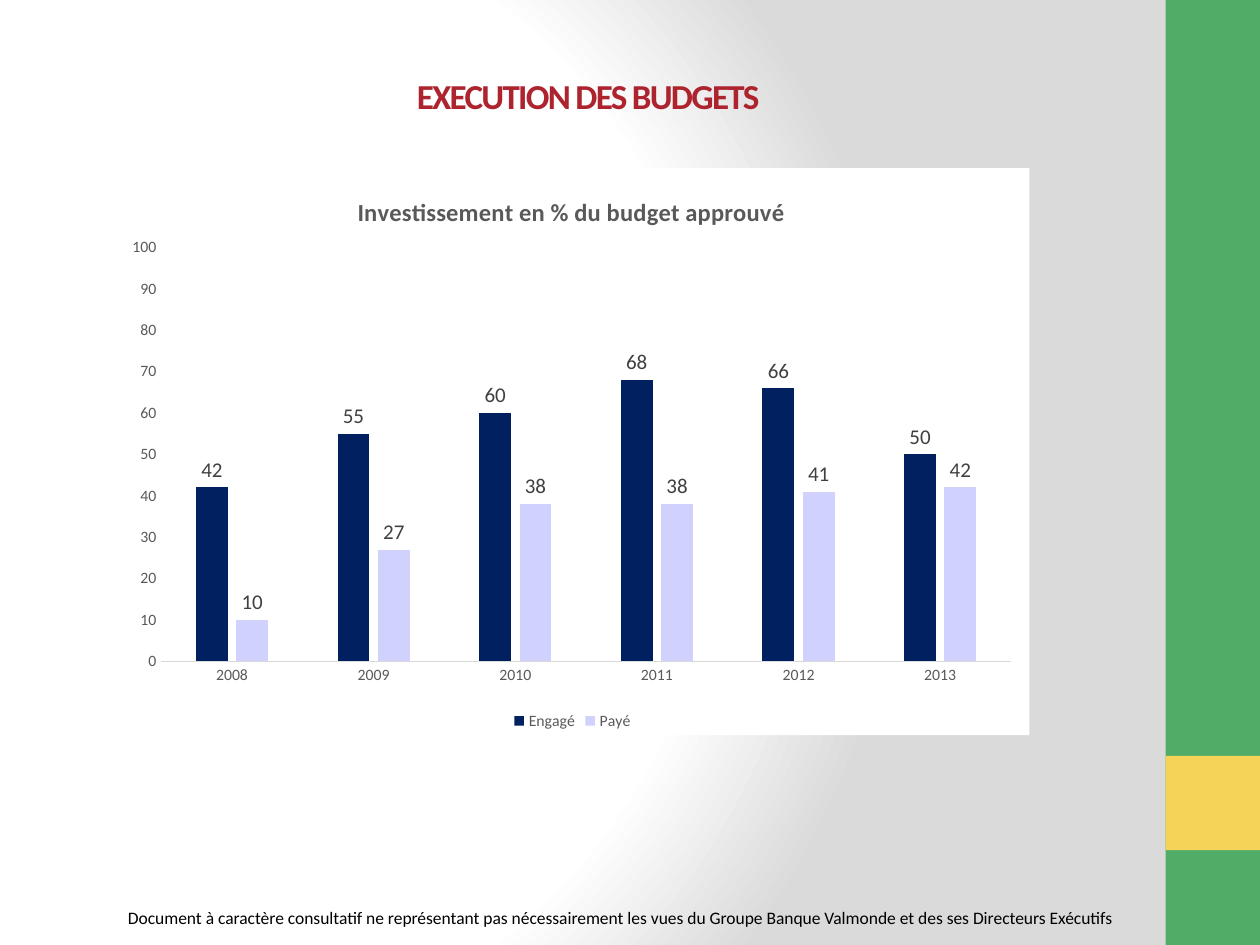
from dataclasses import dataclass

import pptx
import pptx.chart.data
import pptx.dml.color
import pptx.enum.chart
import pptx.enum.shapes
import pptx.enum.text
import pptx.oxml
import pptx.oxml.ns
import pptx.util

Cm = pptx.util.Cm
Pt = pptx.util.Pt
qn = pptx.oxml.ns.qn


@dataclass(frozen=True)
class Theme:
    font: str = "Calibri"
    green: str = "50AD68"
    yellow: str = "F4D356"
    red: str = "AD242F"
    navy: str = "002060"
    lilac: str = "D0D1FD"
    black: str = "000000"
    label: str = "404040"
    muted: str = "595959"
    rule: str = "D9D9D9"
    white: str = "FFFFFF"
    shade: str = "DADADA"
    title_size: int = 20
    chart_title_size: int = 14
    label_size: int = 12
    footer_size: int = 10
    axis_size: int = 9


THEME = Theme()


def rgb(value):
    return pptx.dml.color.RGBColor.from_string(value)


def style_font(font, size, color, bold=False):
    font.name = THEME.font
    font.size = Pt(size)
    font.bold = bold
    font.color.rgb = rgb(color)


def paint(fill, color):
    fill.solid()
    fill.fore_color.rgb = rgb(color)


def set_background(s):
    s.background.fill.gradient()
    grad = s.element.find(".//" + qn("a:gradFill"))
    stops = ((0, THEME.white), (75, THEME.white), (100, THEME.shade))
    gs = "".join(
        f'<a:gs pos="{pos * 1000}"><a:srgbClr val="{color}"/></a:gs>'
        for pos, color in stops
    )
    radial = pptx.oxml.parse_xml(
        f'<a:gradFill {pptx.oxml.ns.nsdecls("a")} rotWithShape="1">'
        f'<a:gsLst>{gs}</a:gsLst><a:path path="circle">'
        '<a:fillToRect l="20000" t="50000" r="100000" b="50000"/>'
        "</a:path></a:gradFill>"
    )
    grad.getparent().replace(grad, radial)


def add_side_band(s, x, y, w, h):
    bands = ((0, h, THEME.green), (0.8 * h, w, THEME.yellow))
    for offset, height, color in bands:
        sp = s.shapes.add_shape(
            pptx.enum.shapes.MSO_SHAPE.RECTANGLE,
            Cm(x), Cm(y + offset), Cm(w), Cm(height),
        )
        sp.shadow.inherit = False
        paint(sp.fill, color)
        sp.line.fill.background()


def add_text(s, x, y, w, h, text, size, color, bold=False):
    sp = s.shapes.add_textbox(Cm(x), Cm(y), Cm(w), Cm(h))
    tf = sp.text_frame
    tf.word_wrap = True
    tf.text = text
    style_font(tf.paragraphs[0].runs[0].font, size, color, bold)
    return tf


def add_title(s, x, y, w, h):
    tf = add_text(s, x, y, w, h, "EXECUTION DES BUDGETS",
                  THEME.title_size, THEME.red, True)
    tf.margin_top = Cm(0.86)
    p = tf.paragraphs[0]
    p.alignment = pptx.enum.text.PP_ALIGN.CENTER
    p.runs[0].font._element.set("spc", "-100")


def add_footer(s, x, y, w, h):
    add_text(
        s, x, y, w, h,
        "Document à caractère consultatif ne représentant pas nécessairement "
        "les vues du Groupe Banque Valmonde et des ses Directeurs Exécutifs",
        THEME.footer_size, THEME.black,
    )


def set_layout(parent, before, inner=False, **place):
    old = parent.find(qn("c:layout"))
    if old is not None:
        parent.remove(old)
    target = '<c:layoutTarget val="inner"/>' if inner else ""
    modes = "".join(f'<c:{k}Mode val="edge"/>' for k in "xy")
    values = "".join(f'<c:{k} val="{v}"/>' for k, v in place.items())
    layout = pptx.oxml.parse_xml(
        f'<c:layout {pptx.oxml.ns.nsdecls("c")}><c:manualLayout>'
        f"{target}{modes}{values}</c:manualLayout></c:layout>"
    )
    parent.find(qn(before)).addprevious(layout)


def fill_chart_area(chart):
    area = pptx.oxml.parse_xml(
        f'<c:spPr {pptx.oxml.ns.nsdecls("c", "a")}><a:solidFill>'
        f'<a:srgbClr val="{THEME.white}"/></a:solidFill>'
        "<a:ln><a:noFill/></a:ln></c:spPr>"
    )
    chart.element.find(qn("c:chart")).addnext(area)


def style_axes(chart):
    for axis in (chart.category_axis, chart.value_axis):
        axis.has_major_gridlines = False
        axis.major_tick_mark = pptx.enum.chart.XL_TICK_MARK.NONE
        axis.minor_tick_mark = pptx.enum.chart.XL_TICK_MARK.NONE
        style_font(axis.tick_labels.font, THEME.axis_size, THEME.muted)
    chart.category_axis.format.line.color.rgb = rgb(THEME.rule)
    chart.category_axis.format.line.width = Pt(0.75)
    chart.value_axis.format.line.fill.background()
    chart.value_axis.minimum_scale = 0
    chart.value_axis.maximum_scale = 100
    chart.value_axis.major_unit = 10


def style_series(plot):
    plot.gap_width = 219
    plot.overlap = -27
    plot.vary_by_categories = False
    for series, color in zip(plot.series, (THEME.navy, THEME.lilac)):
        paint(series.format.fill, color)
        series.invert_if_negative = False
        labels = series.data_labels
        labels.show_value = True
        labels.position = pptx.enum.chart.XL_LABEL_POSITION.OUTSIDE_END
        style_font(labels.font, THEME.label_size, THEME.label)


def add_budget_chart(s, x, y, w, h):
    data = pptx.chart.data.CategoryChartData()
    data.categories = [str(year) for year in range(2008, 2014)]
    data.add_series("Engagé", (42, 55, 60, 68, 66, 50))
    data.add_series("Payé", (10, 27, 38, 38, 41, 42))
    chart = s.shapes.add_chart(
        pptx.enum.chart.XL_CHART_TYPE.COLUMN_CLUSTERED,
        Cm(x), Cm(y), Cm(w), Cm(h), data,
    ).chart
    style_font(chart.font, THEME.footer_size, THEME.black)
    fill_chart_area(chart)

    chart.has_title = True
    tf = chart.chart_title.text_frame
    tf.text = "Investissement en % du budget approuvé"
    style_font(tf.paragraphs[0].runs[0].font,
               THEME.chart_title_size, THEME.muted, True)
    set_layout(chart.chart_title._element, "c:overlay", x=0.26, y=0.04)

    chart.has_legend = True
    chart.legend.position = pptx.enum.chart.XL_LEGEND_POSITION.BOTTOM
    chart.legend.include_in_layout = False
    style_font(chart.legend.font, THEME.axis_size, THEME.muted)

    style_axes(chart)
    style_series(chart.plots[0])
    plot_area = chart.element.find(".//" + qn("c:plotArea"))
    set_layout(plot_area, "c:barChart", inner=True,
               x=0.05, y=0.14, w=0.93, h=0.73)


def main():
    prs = pptx.Presentation()
    prs.slide_width, prs.slide_height = Cm(25.4), Cm(19.05)
    s = prs.slides.add_slide(prs.slide_layouts[6])
    set_background(s)
    add_side_band(s, 23.5, 0, 1.9, 19.05)
    add_footer(s, 2.33, 18.15, 22.43, 0.68)
    add_title(s, 1.27, 0.64, 21.17, 3.18)
    add_budget_chart(s, 2.33, 3.39, 18.42, 11.43)
    prs.save("out.pptx")


if __name__ == "__main__":
    main()
